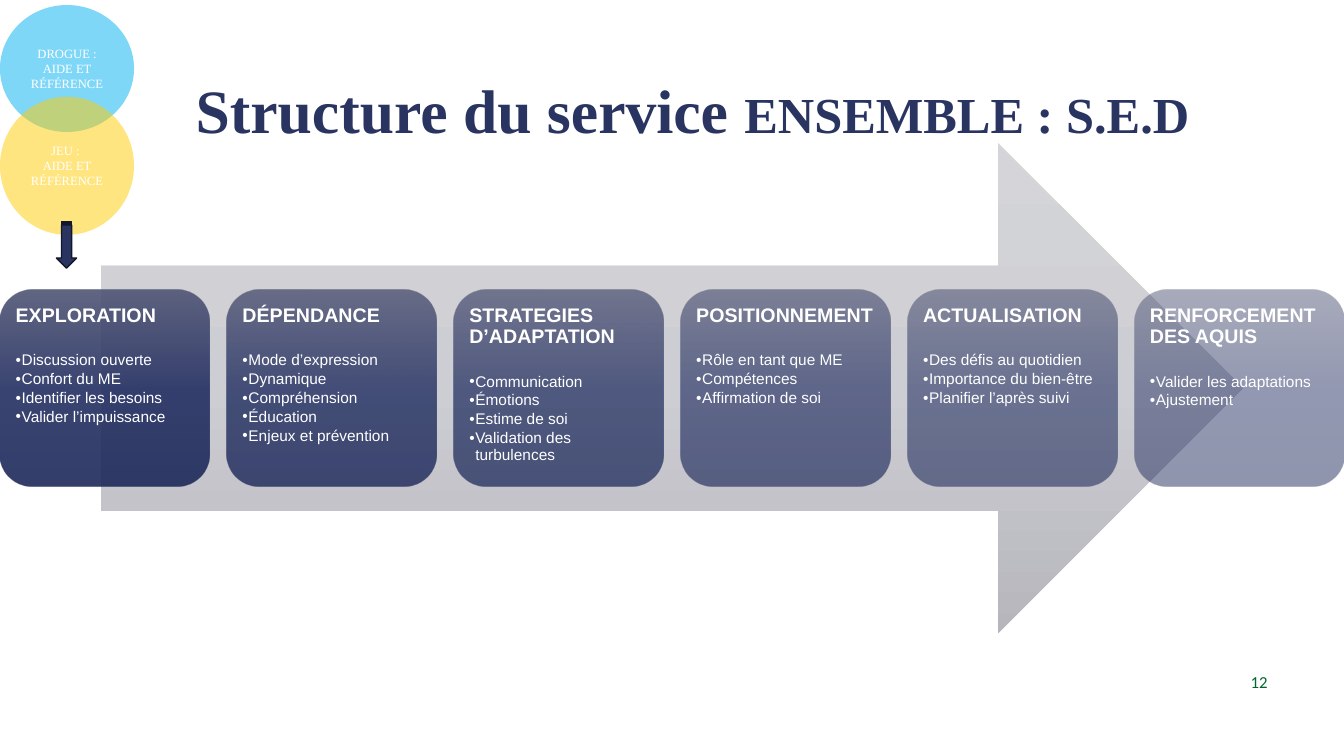
from lxml.etree import SubElement
from pptx import Presentation
from pptx.dml.color import RGBColor
from pptx.enum.shapes import MSO_SHAPE as Shape
from pptx.enum.text import MSO_ANCHOR as Anchor, PP_ALIGN as Align
from pptx.oxml.ns import qn
from pptx.util import Inches, Pt

NAVY = "293461"
WHITE = "FFFFFF"
SERIF = "Times New Roman"
SANS = "Arial"
SLIDE_WIDTH = 13.33
STEP_WIDTH = 2.08
STEPS = [
    ("EXPLORATION", ["Discussion ouverte", "Confort du ME", "Identifier les besoins",
                     "Valider l’impuissance"]),
    ("DÉPENDANCE", ["Mode d’expression", "Dynamique", "Compréhension", "Éducation",
                    "Enjeux et prévention"]),
    ("STRATEGIES D’ADAPTATION", ["Communication", "Émotions", "Estime de soi",
                                 "Validation des turbulences"]),
    ("POSITIONNEMENT", ["Rôle en tant que ME", "Compétences", "Affirmation de soi"]),
    ("ACTUALISATION", ["Des défis au quotidien", "Importance du bien-être",
                       "Planifier l’après suivi"]),
    ("RENFORCEMENT DES AQUIS", ["Valider les adaptations", "Ajustement"]),
]


def color(value):
    return RGBColor.from_string(value)


def set_alpha(color_element, percent):
    SubElement(color_element, qn("a:alpha"), val=str(percent * 1000))


def add_plain_shape(page, kind, left, top, width, height):
    shape = page.shapes.add_shape(kind, Inches(left), Inches(top), Inches(width), Inches(height))
    shape.shadow.inherit = False
    shape.line.fill.background()
    return shape


def fill_solid(shape, value, alpha=100):
    shape.fill.solid()
    shape.fill.fore_color.rgb = color(value)
    if alpha < 100:
        set_alpha(shape.fill._xPr.find(".//" + qn("a:srgbClr")), alpha)


def fill_gradient(shape, values, alpha=100):
    shape.fill.gradient()
    shape.fill.gradient_angle = 270
    stops = shape.fill._xPr.find(".//" + qn("a:gsLst"))
    for stop in list(stops):
        stops.remove(stop)
    for index, value in enumerate(values):
        stop = SubElement(stops, qn("a:gs"), pos=str(index * 50000))
        tint = SubElement(stop, qn("a:srgbClr"), val=value)
        if alpha < 100:
            set_alpha(tint, alpha)


def add_text_box(page, left, top, width, height, anchor=Anchor.TOP, inset=None):
    box = page.shapes.add_textbox(Inches(left), Inches(top), Inches(width), Inches(height))
    frame = box.text_frame
    frame.word_wrap = True
    frame.vertical_anchor = anchor
    if inset is not None:
        frame.margin_left = frame.margin_right = Inches(inset)
        frame.margin_top = frame.margin_bottom = Inches(inset)
    return frame


def add_para(frame, align=Align.LEFT, line_spacing=1.0, after=0, bullet=False):
    first = frame.paragraphs[0]
    para = frame.add_paragraph() if first.runs else first
    para.alignment = align
    para.line_spacing = line_spacing
    para.space_after = Pt(after)
    if bullet:
        properties = para._p.get_or_add_pPr()
        properties.set("marL", str(Inches(0.06)))
        properties.set("indent", str(Inches(-0.06)))
        SubElement(properties, qn("a:buFont"), typeface=SANS)
        SubElement(properties, qn("a:buChar"), char="•")
    return para


def add_span(para, text, size=11, font=SANS, tint=WHITE, bold=False):
    span = para.add_run()
    span.text = text
    span.font.size = Pt(size)
    span.font.name = font
    span.font.bold = bold
    span.font.color.rgb = color(tint)


def add_title(page):
    frame = add_text_box(page, 1.12, 0.4, 11.5, 1.45, Anchor.MIDDLE)
    para = add_para(frame, Align.CENTER, 0.9)
    add_span(para, "Structure du service ", size=44, font=SERIF, tint=NAVY, bold=True)
    add_span(para, "ENSEMBLE : S.E.D", size=36, font=SERIF, tint=NAVY, bold=True)


def add_page_number(page):
    frame = add_text_box(page, 9.67, 6.56, 3, 0.4, Anchor.MIDDLE)
    add_span(add_para(frame, Align.RIGHT), "12", size=12, font="Calibri", tint="00662F")


def add_step(page, left, heading, points, alpha):
    card = add_plain_shape(page, Shape.ROUNDED_RECTANGLE, left, 2.87, STEP_WIDTH, 1.96)
    fill_gradient(card, ["525776", "263264", "1F2B5B"], alpha)
    frame = add_text_box(page, left + 0.095, 2.97, 1.88, 1.76, inset=0.06)
    add_span(add_para(frame, line_spacing=0.9, after=18.5), heading, size=14, bold=True)
    for point in points:
        add_span(add_para(frame, line_spacing=0.9, after=1.65, bullet=True), point)


def add_circle(page, top, height, value, lines):
    circle = add_plain_shape(page, Shape.OVAL, 0, top, 1.33, height)
    fill_solid(circle, value, alpha=50)
    circle.text_frame.word_wrap = True
    circle.text_frame.vertical_anchor = Anchor.MIDDLE
    for line in lines:
        add_span(add_para(circle.text_frame, Align.CENTER), line, size=9, font=SERIF)


def add_down_arrow(page):
    arrow = add_plain_shape(page, Shape.STRIPED_RIGHT_ARROW, 0.43, 2.33, 0.46, 0.2)
    arrow.rotation = 90
    fill_solid(arrow, NAVY)
    arrow.line.color.rgb = color("12172B")
    arrow.line.width = Pt(1)


def main():
    deck = Presentation()
    deck.slide_width = Inches(SLIDE_WIDTH)
    deck.slide_height = Inches(7.5)
    page = deck.slides.add_slide(deck.slide_layouts[6])
    add_title(page)
    add_page_number(page)
    process_arrow = add_plain_shape(page, Shape.RIGHT_ARROW, 1, 1.42, 11.33, 4.86)
    fill_gradient(process_arrow, ["D5D5D9", "CDCED3", "B6B6BC"])
    pitch = (SLIDE_WIDTH - STEP_WIDTH) / (len(STEPS) - 1)
    for index, (heading, points) in enumerate(STEPS):
        add_step(page, index * pitch, heading, points, alpha=90 - 8 * index)
    add_circle(page, 0.05, 1.26, "00B0F0", ["DROGUE : AIDE ET RÉFÉRENCE"])
    add_circle(page, 0.96, 1.37, "FFCC00", ["JEU : ", "AIDE ET RÉFÉRENCE"])
    add_down_arrow(page)
    deck.save("out.pptx")


if __name__ == "__main__":
    main()
